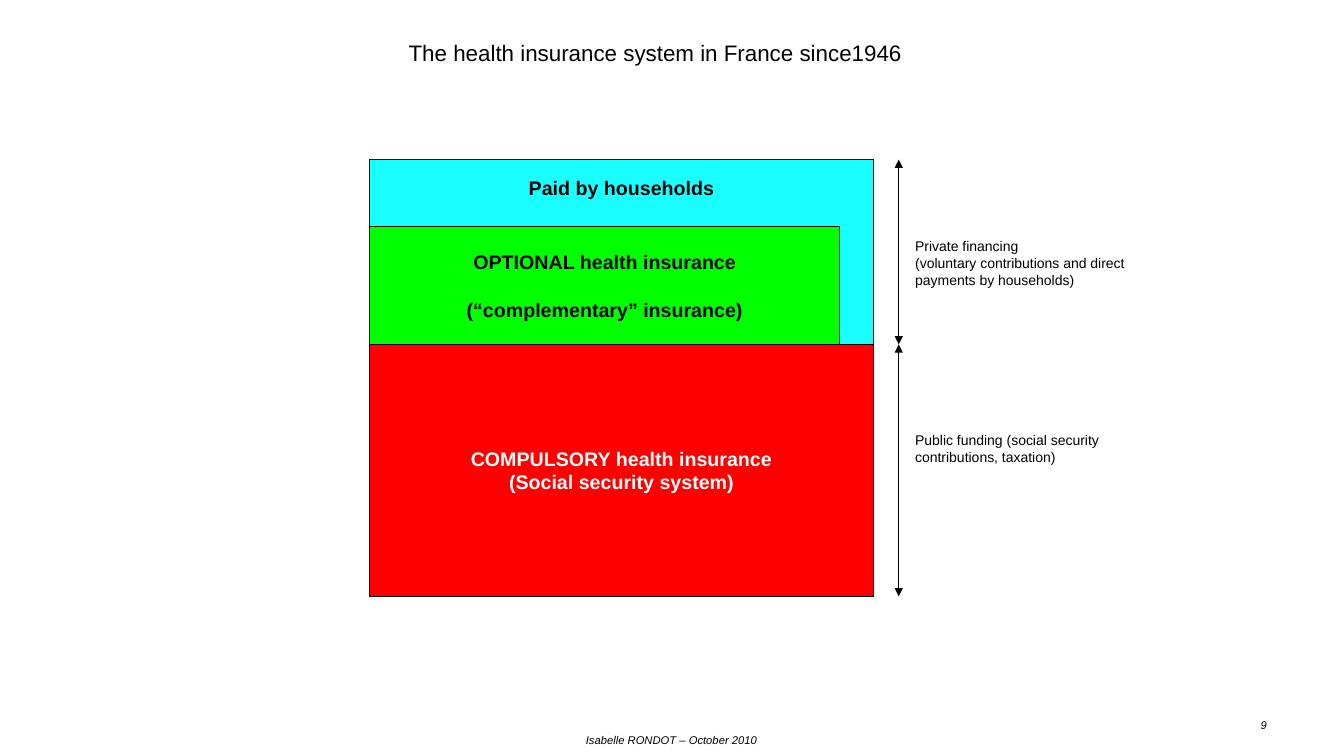
from dataclasses import dataclass

from lxml import etree
from pptx import Presentation
from pptx.dml.color import RGBColor
from pptx.enum.shapes import MSO_CONNECTOR, MSO_SHAPE
from pptx.enum.text import MSO_ANCHOR, PP_ALIGN
from pptx.oxml.ns import qn
from pptx.shapes.base import BaseShape
from pptx.slide import Slide
from pptx.util import Pt

LEFT, CENTER, RIGHT = PP_ALIGN.LEFT, PP_ALIGN.CENTER, PP_ALIGN.RIGHT
TOP, MIDDLE = MSO_ANCHOR.TOP, MSO_ANCHOR.MIDDLE
RECT, STRAIGHT = MSO_SHAPE.RECTANGLE, MSO_CONNECTOR.STRAIGHT


@dataclass(frozen=True)
class Theme:
    font: str = "Arial"
    black: RGBColor = RGBColor(0, 0, 0)
    white: RGBColor = RGBColor(255, 255, 255)
    cyan: RGBColor = RGBColor(0, 255, 255)
    green: RGBColor = RGBColor(0, 255, 0)
    red: RGBColor = RGBColor(255, 0, 0)
    title: float = 16
    block: float = 14
    note: float = 10
    foot: float = 8
    line: float = 0.75


THEME = Theme()
EDGE, WIDTH = 264, 360
ROOF, SPLIT, FLOOR = 114, 246, 426
ARROW_X, NOTE_X = 642, 646.6


@dataclass(frozen=True)
class Block:
    top: float
    width: float
    height: float
    fill: RGBColor
    ink: RGBColor
    lines: tuple[str, ...]
    anchor: MSO_ANCHOR = MIDDLE
    inset: float = 3.6
    gap: float = 0
    alpha: int = 100


@dataclass(frozen=True)
class Label:
    left: float
    top: float
    width: float
    height: float
    size: float
    align: PP_ALIGN
    lines: tuple[str, ...]
    anchor: MSO_ANCHOR = TOP
    slant: bool = False


@dataclass(frozen=True)
class Arrow:
    top: float
    base: float


BLOCKS = (
    Block(ROOF, WIDTH, 156, THEME.cyan, THEME.black,
          ("Paid by households",), TOP, 11.5, alpha=90),
    Block(SPLIT, WIDTH, FLOOR - SPLIT, THEME.red, THEME.white,
          ("COMPULSORY health insurance", "(Social security system)")),
    Block(162, 336, SPLIT - 162, THEME.green, THEME.black,
          ("OPTIONAL health insurance", "(“complementary” insurance)"), gap=17.5),
)
LABELS = (
    Label(144, 21.6, 648, 32.4, THEME.title, CENTER,
          ("The health insurance system in France since1946",), MIDDLE),
    Label(NOTE_X, 166.3, 168, 44, THEME.note, LEFT,
          ("Private financing", "(voluntary contributions and direct",
           "payments by households)")),
    Label(NOTE_X, 304.6, 150, 32, THEME.note, LEFT,
          ("Public funding (social security", "contributions, taxation)")),
    Label(319.7, 520.6, 320, 19.4, THEME.foot, CENTER,
          ("Isabelle RONDOT – October 2010",), slant=True),
    Label(688, 509.8, 224, 19.4, THEME.foot, RIGHT, ("9",), slant=True),
)
ARROWS = (Arrow(ROOF, SPLIT), Arrow(SPLIT, FLOOR))


def write(shape: BaseShape, lines: tuple[str, ...], size: float, ink: RGBColor,
          align: PP_ALIGN, anchor: MSO_ANCHOR, bold: bool = False,
          slant: bool = False, gap: float = 0) -> None:
    frame = shape.text_frame
    frame.word_wrap = True
    frame.vertical_anchor = anchor
    for index, text in enumerate(lines):
        para = frame.add_paragraph() if index else frame.paragraphs[0]
        para.alignment = align
        para.space_before = Pt(gap if index else 0)
        run = para.add_run()
        run.text = text
        font = run.font
        font.name, font.size = THEME.font, Pt(size)
        font.bold, font.italic = bold, slant
        font.color.rgb = ink


def draw_block(slide: Slide, block: Block) -> None:
    shape = slide.shapes.add_shape(
        RECT, Pt(EDGE), Pt(block.top), Pt(block.width), Pt(block.height))
    shape.shadow.inherit = False
    shape.fill.solid()
    shape.fill.fore_color.rgb = block.fill
    if block.alpha < 100:
        tint = shape.fill._xPr.find(".//" + qn("a:srgbClr"))
        etree.SubElement(tint, qn("a:alpha"), val=str(block.alpha * 1000))
    shape.line.color.rgb = THEME.black
    shape.line.width = Pt(THEME.line)
    shape.text_frame.margin_top = Pt(block.inset)
    write(shape, block.lines, THEME.block, block.ink, CENTER, block.anchor,
          bold=True, gap=block.gap)


def draw_label(slide: Slide, label: Label) -> None:
    box = slide.shapes.add_textbox(
        Pt(label.left), Pt(label.top), Pt(label.width), Pt(label.height))
    write(box, label.lines, label.size, THEME.black, label.align, label.anchor,
          slant=label.slant)


def draw_arrow(slide: Slide, arrow: Arrow) -> None:
    link = slide.shapes.add_connector(
        STRAIGHT, Pt(ARROW_X), Pt(arrow.top), Pt(ARROW_X), Pt(arrow.base))
    link.line.color.rgb = THEME.black
    link.line.width = Pt(THEME.line)
    line = link.line._get_or_add_ln()
    for end in ("a:headEnd", "a:tailEnd"):
        etree.SubElement(line, qn(end), type="triangle")
    etree.SubElement(link._element.spPr, qn("a:effectLst"))


def main() -> None:
    deck = Presentation()
    deck.slide_width, deck.slide_height = Pt(960), Pt(540)
    slide = deck.slides.add_slide(deck.slide_layouts[6])
    for block in BLOCKS:
        draw_block(slide, block)
    for label in LABELS:
        draw_label(slide, label)
    for arrow in ARROWS:
        draw_arrow(slide, arrow)
    deck.save("out.pptx")


if __name__ == "__main__":
    main()
